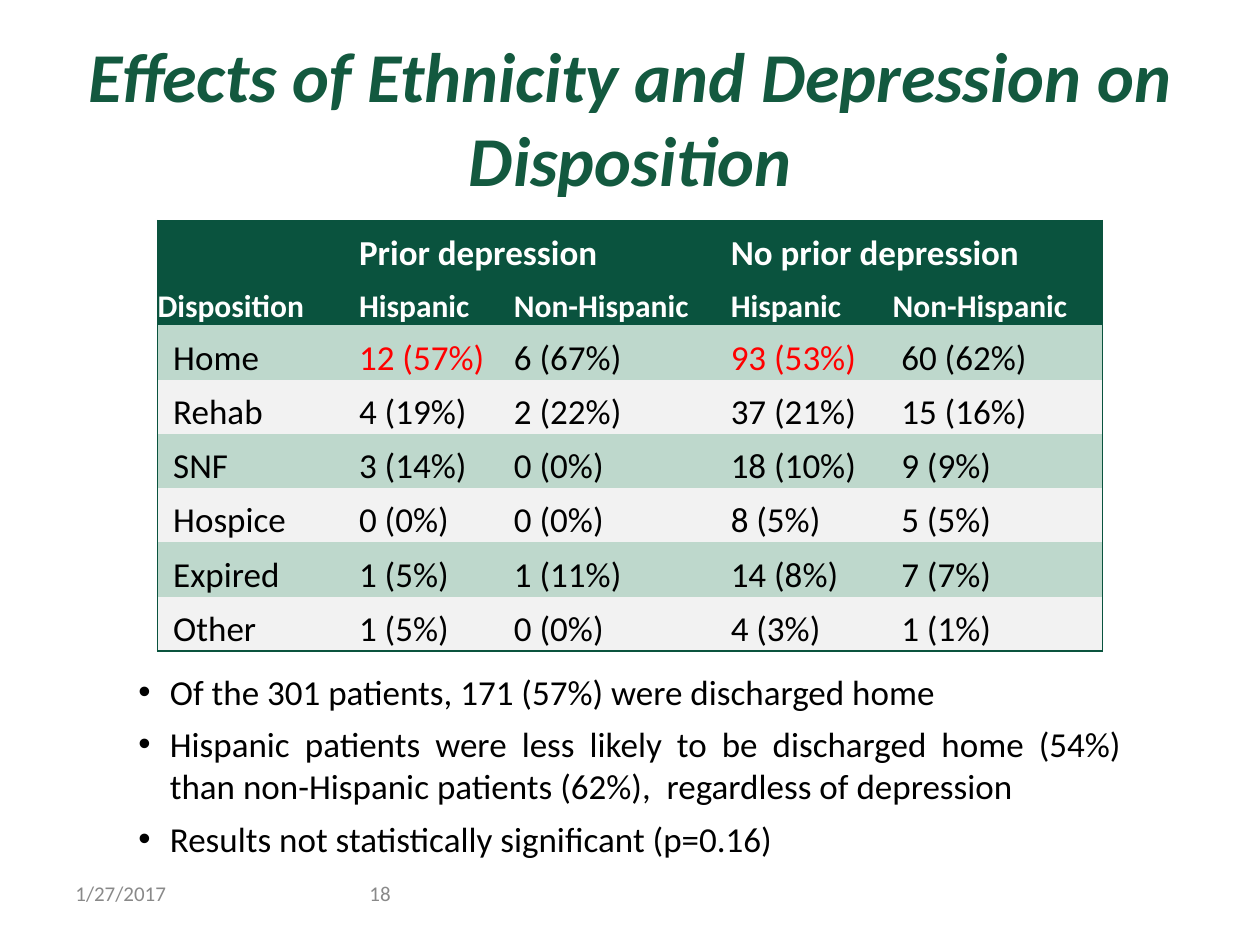
from dataclasses import dataclass

from pptx import Presentation
from pptx.dml.color import RGBColor
from pptx.enum.text import MSO_ANCHOR as Anchor, PP_ALIGN as Align
from pptx.oxml import parse_xml
from pptx.oxml.ns import nsdecls, qn
from pptx.util import Pt


@dataclass(frozen=True)
class Theme:
    font: str = "Calibri"
    title: str = "13593F"
    header: str = "0A533E"
    header_text: str = "FFFFFF"
    band: str = "BED8CC"
    plain: str = "F2F2F2"
    text: str = "000000"
    highlight: str = "FF0000"
    footer: str = "898989"
    title_size: int = 40
    body_size: int = 20
    subheader_size: int = 18
    footer_size: int = 12


theme = Theme()
NO_GRID_STYLE = "{2D5ABB26-0587-4C30-8999-92F81FD0307C}"


def add_text(paragraph, text, size, color, bold=False, italic=False):
    run = paragraph.add_run()
    run.text = text
    font = run.font
    font.name, font.size = theme.font, Pt(size)
    font.bold, font.italic = bold, italic
    font.color.rgb = RGBColor.from_string(color)


def set_borders(cell, sides):
    """Draw the sides named in L, R, T, B order; call before filling the cell."""
    properties = cell._tc.get_or_add_tcPr()
    for side in sides:
        properties.append(parse_xml(
            f'<a:ln{side} {nsdecls("a")} w="{Pt(1)}"><a:solidFill>'
            f'<a:srgbClr val="{theme.header}"/></a:solidFill></a:ln{side}>'))


presentation = Presentation()
presentation.slide_width, presentation.slide_height = Pt(720), Pt(540)
slide = presentation.slides.add_slide(presentation.slide_layouts[5])

# Title
title = slide.shapes.title
title.left, title.top, title.width, title.height = Pt(36), Pt(21.6), Pt(648), Pt(90)
title.text_frame.vertical_anchor = Anchor.MIDDLE
title.text_frame.word_wrap = True
paragraph = title.text_frame.paragraphs[0]
paragraph.alignment = Align.CENTER
add_text(paragraph, "Effects of Ethnicity and Depression on Disposition",
         theme.title_size, theme.title, bold=True, italic=True)

# Disposition table
rows = [
    ["", "Prior depression", "", "No prior depression", ""],
    ["Disposition", "Hispanic", "Non-Hispanic", "Hispanic", "Non-Hispanic"],
    ["Home", "12 (57%)", "6 (67%)", "93 (53%)", "60 (62%)"],
    ["Rehab", "4 (19%)", "2 (22%)", "37 (21%)", "15 (16%)"],
    ["SNF", "3 (14%)", "0 (0%)", "18 (10%)", "9 (9%)"],
    ["Hospice", "0 (0%)", "0 (0%)", "8 (5%)", "5 (5%)"],
    ["Expired", "1 (5%)", "1 (11%)", "14 (8%)", "7 (7%)"],
    ["Other", "1 (5%)", "0 (0%)", "4 (3%)", "1 (1%)"],
]
highlighted = {(2, 1), (2, 3)}
column_widths = [115.2, 88.5, 123.9, 88.5, 123.9]
row_heights = [31, 29] + [31] * 6
last_row, last_column = len(rows) - 1, len(column_widths) - 1

table = slide.shapes.add_table(len(rows), len(column_widths), Pt(90), Pt(126),
                               Pt(sum(column_widths)), Pt(sum(row_heights))).table
table._tbl.tblPr.find(qn("a:tableStyleId")).text = NO_GRID_STYLE
for column, width in zip(table.columns, column_widths):
    column.width = Pt(width)
for row, height in zip(table.rows, row_heights):
    row.height = Pt(height)
for column_index in (1, 3):
    table.cell(0, column_index).merge(table.cell(0, column_index + 1))

for row_index, values in enumerate(rows):
    is_header = row_index < 2
    if is_header:
        fill = theme.header
    else:
        fill = theme.plain if row_index % 2 else theme.band
    size = theme.subheader_size if row_index == 1 else theme.body_size
    for column_index, value in enumerate(values):
        cell = table.cell(row_index, column_index)
        cell.margin_left = cell.margin_right = cell.margin_top = cell.margin_bottom = 0
        if not is_header and column_index in (0, last_column):
            cell.margin_left = Pt(9)
        elif row_index == 1 and column_index == last_column:
            cell.margin_left = Pt(4)
        cell.vertical_anchor = Anchor.BOTTOM

        reaches_right = column_index == last_column or (row_index, column_index) == (0, 3)
        edges = {"L": column_index == 0, "R": reaches_right,
                 "T": row_index == 0, "B": row_index == last_row}
        set_borders(cell, [side for side, drawn in edges.items() if drawn])
        cell.fill.solid()
        cell.fill.fore_color.rgb = RGBColor.from_string(fill)

        color = theme.header_text if is_header else theme.text
        if (row_index, column_index) in highlighted:
            color = theme.highlight
        if value:
            add_text(cell.text_frame.paragraphs[0], value, size, color, bold=is_header)

# Findings
findings = [
    "Of the 301 patients, 171 (57%) were discharged home",
    "Hispanic patients were less likely to be discharged home (54%) "
    "than non-Hispanic patients (62%),  regardless of depression",
    "Results not statistically significant (p=0.16)",
]
findings_frame = slide.shapes.add_textbox(Pt(72), Pt(379.5), Pt(576), Pt(116.6)).text_frame
findings_frame.word_wrap = True
for index, finding in enumerate(findings):
    paragraph = findings_frame.add_paragraph() if index else findings_frame.paragraphs[0]
    properties = paragraph._p.get_or_add_pPr()
    properties.set("marL", str(Pt(18)))
    properties.set("indent", str(Pt(-18)))
    properties.append(parse_xml(f'<a:buFont {nsdecls("a")} typeface="Arial"/>'))
    properties.append(parse_xml(f'<a:buChar {nsdecls("a")} char="•"/>'))
    paragraph.alignment = Align.JUSTIFY
    if index:
        paragraph.space_before = Pt(6)
    add_text(paragraph, finding, theme.body_size, theme.text)

# Date and slide number
for left, text in ((36, "1/27/2017"), (204, "18")):
    footer_frame = slide.shapes.add_textbox(Pt(left), Pt(496), Pt(168), Pt(28.8)).text_frame
    footer_frame.word_wrap = True
    footer_frame.vertical_anchor = Anchor.MIDDLE
    add_text(footer_frame.paragraphs[0], text, theme.footer_size, theme.footer)

presentation.save("out.pptx")
